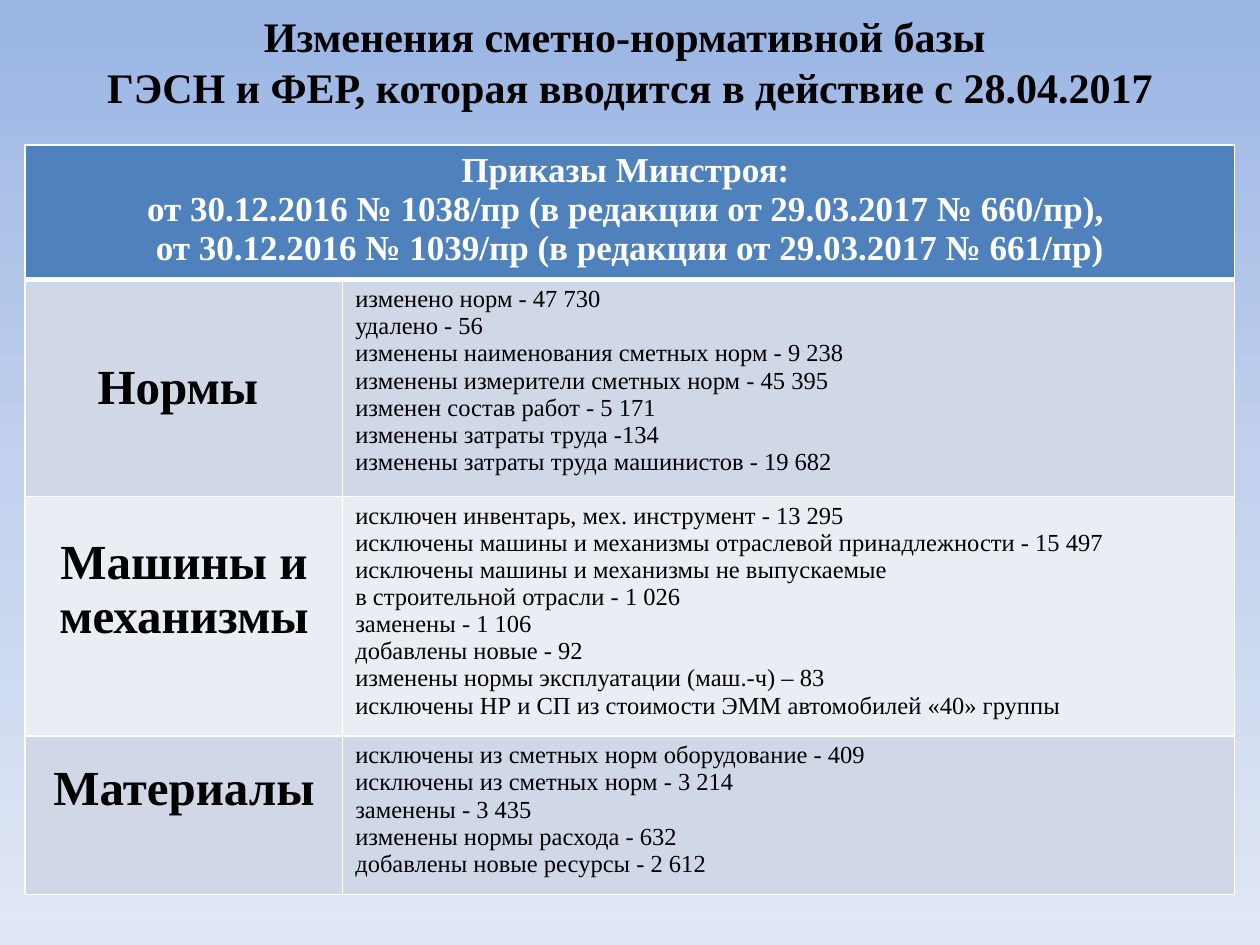
import copy

import pptx
import pptx.util
from pptx.dml.color import RGBColor
from pptx.enum.text import MSO_ANCHOR, PP_ALIGN
from pptx.oxml.ns import qn
from pptx.oxml.xmlchemy import OxmlElement
from pptx.util import Inches, Pt

# Content
TITLE = "Изменения сметно-нормативной базы \nГЭСН и ФЕР, которая вводится в действие с 28.04.2017"
ORDERS = ("Приказы Минстроя: \n"
          "от 30.12.2016 № 1038/пр (в редакции от 29.03.2017 № 660/пр), \n"
          "от 30.12.2016 № 1039/пр (в редакции от 29.03.2017 № 661/пр)")
SECTIONS = [
    ("Нормы ", [
        "изменено норм - 47 730",
        "удалено - 56",
        "изменены наименования сметных норм - 9 238",
        "изменены измерители сметных норм - 45 395",
        "изменен состав работ - 5 171",
        "изменены затраты труда -134",
        "изменены затраты труда машинистов - 19 682",
    ]),
    ("Машины и механизмы", [
        "исключен инвентарь, мех. инструмент - 13 295",
        "исключены машины и механизмы отраслевой принадлежности - 15 497",
        "исключены машины и механизмы не выпускаемые \nв строительной отрасли - 1 026",
        "заменены - 1 106",
        "добавлены новые - 92",
        "изменены нормы эксплуатации (маш.-ч) – 83",
        "исключены НР и СП из стоимости ЭММ автомобилей «40» группы",
    ]),
    ("Материалы", [
        "исключены из сметных норм оборудование - 409",
        "исключены из сметных норм - 3 214",
        "заменены - 3 435",
        "изменены нормы расхода - 632",
        "добавлены новые ресурсы - 2 612",
    ]),
]
COLUMN_WIDTHS = [2.52, 7.08]
ROW_HEIGHTS = [1.07, 1.72, 1.9, 1.26]
LABEL_BOTTOM_MARGINS = [0.05, 0.47, 0.47]

# Formats
BLACK = RGBColor(0x00, 0x00, 0x00)
WHITE = RGBColor(0xFF, 0xFF, 0xFF)
HEADER_BLUE = RGBColor(0x4F, 0x81, 0xBD)
BANDS = [RGBColor(0xD0, 0xD8, 0xE8), RGBColor(0xE9, 0xED, 0xF4)]
BACKDROP = [(0, RGBColor(0x9A, 0xB5, 0xE4)), (0.5, RGBColor(0xC2, 0xD1, 0xED)),
            (1, RGBColor(0xE1, 0xE8, 0xF5))]
FONT = "Times New Roman"
TITLE_FONT = {"name": FONT, "size": Pt(24), "bold": True}
ORDERS_FONT = {"name": FONT, "size": Pt(20), "bold": True}
LABEL_FONT = {"name": FONT, "size": Pt(28), "bold": True}
ITEM_FONT = {"name": FONT, "size": Pt(14), "bold": False}


def write(frame, paragraphs, font, color, align):
    for index, wording in enumerate(paragraphs):
        paragraph = frame.paragraphs[0] if index == 0 else frame.add_paragraph()
        paragraph.text = wording
        paragraph.alignment = align
        for run in paragraph.runs:
            for key, value in font.items():
                setattr(run.font, key, value)
            run.font.color.rgb = color
        # Line breaks take the size of the text around them
        for line_break in paragraph._p.findall(qn("a:br")):
            line_break.append(copy.deepcopy(paragraph.runs[0]._r.rPr))


def add_borders(cell, bottom_width):
    properties = cell._tc.get_or_add_tcPr()
    widths = {"a:lnL": 1, "a:lnR": 1, "a:lnT": 1, "a:lnB": bottom_width}
    for position, (tag, width) in enumerate(widths.items()):
        line = OxmlElement(tag)
        line.set("w", str(Pt(width)))
        solid = OxmlElement("a:solidFill")
        color = OxmlElement("a:srgbClr")
        color.set("val", str(WHITE))
        solid.append(color)
        line.append(solid)
        properties.insert(position, line)


def format_cell(cell, color, bottom_width=1):
    cell.fill.solid()
    cell.fill.fore_color.rgb = color
    add_borders(cell, bottom_width)


presentation = pptx.Presentation()
presentation.slide_width, presentation.slide_height = Inches(10), Inches(7.5)
slide = presentation.slides.add_slide(presentation.slide_layouts[5])

# Background gradient, top to bottom
backdrop = slide.background.fill
backdrop.gradient()
backdrop.gradient_angle = 270
stop_list = slide._element.find(".//" + qn("a:gsLst"))
stop_list.append(copy.deepcopy(stop_list[0]))
for stop, (position, color) in zip(backdrop.gradient_stops, BACKDROP):
    stop.position = position
    stop.color.rgb = color

# Title
title = slide.shapes.title
title.left, title.top = Inches(0.5), Inches(0.13)
title.width, title.height = Inches(9), Inches(0.71)
title.text_frame.vertical_anchor = MSO_ANCHOR.MIDDLE
write(title.text_frame, [TITLE], TITLE_FONT, BLACK, PP_ALIGN.CENTER)

# Table
table = slide.shapes.add_table(
    len(ROW_HEIGHTS), len(COLUMN_WIDTHS), Inches(0.2), Inches(1.15),
    Inches(sum(COLUMN_WIDTHS)), Inches(sum(ROW_HEIGHTS))).table
for column, width in zip(table.columns, COLUMN_WIDTHS):
    column.width = Inches(width)
for row, height in zip(table.rows, ROW_HEIGHTS):
    row.height = Inches(height)

# Header row
for column in range(len(COLUMN_WIDTHS)):
    format_cell(table.cell(0, column), HEADER_BLUE, bottom_width=3)
header = table.cell(0, 0)
header.merge(table.cell(0, 1))
write(header.text_frame, [ORDERS], ORDERS_FONT, WHITE, PP_ALIGN.CENTER)

# Section rows
for number, (name, items) in enumerate(SECTIONS):
    label, details = table.cell(number + 1, 0), table.cell(number + 1, 1)
    for cell in (label, details):
        format_cell(cell, BANDS[number % 2])
    label.vertical_anchor = MSO_ANCHOR.MIDDLE
    label.margin_bottom = Inches(LABEL_BOTTOM_MARGINS[number])
    write(label.text_frame, [name], LABEL_FONT, BLACK, PP_ALIGN.CENTER)
    write(details.text_frame, items, ITEM_FONT, BLACK, PP_ALIGN.LEFT)

presentation.save("out.pptx")
